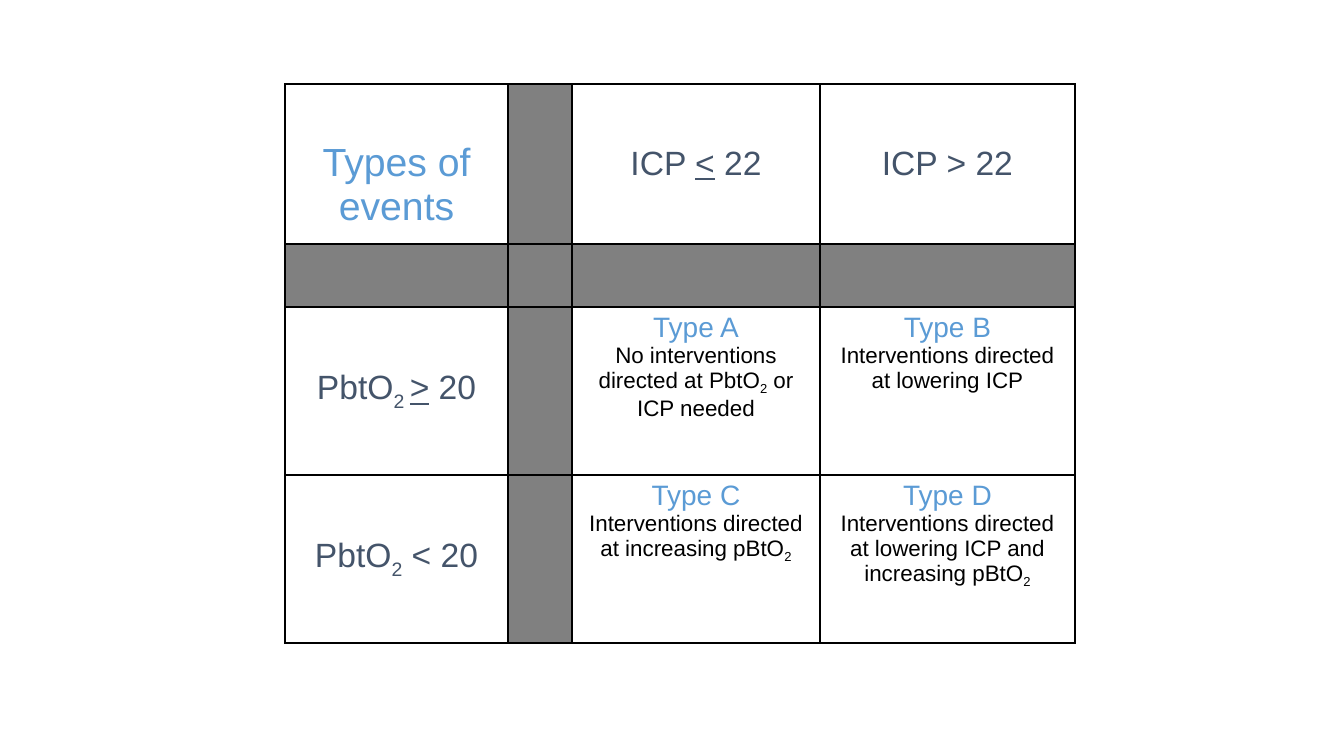
from dataclasses import dataclass

from pptx import Presentation
from pptx import util as u
from pptx.dml.color import RGBColor
from pptx.enum import text
from pptx.oxml import parse_xml
from pptx.oxml.ns import nsdecls

PX = 12192000 / 1344


@dataclass(frozen=True)
class Theme:
    font: str = "Arial"
    accent: str = "5B9BD5"
    heading: str = "44546A"
    ink: str = "000000"
    paper: str = "FFFFFF"
    divider: str = "808080"
    corner_size: int = 28
    heading_size: int = 24
    type_size: int = 20
    body_size: int = 16


THEME = Theme()
COLUMNS = [223, 64, 248, 255]
ROWS = [160, 63, 168, 168]
DIVIDER_ROW = DIVIDER_COLUMN = 1
PLAIN, SUB, UNDER = "plain", "sub", "under"

HEADINGS = {
    (0, 2): [("ICP ", PLAIN), ("<", UNDER), (" 22", PLAIN)],
    (0, 3): [("ICP > 22", PLAIN)],
    (2, 0): [("PbtO", PLAIN), ("2 ", SUB), (">", UNDER), (" 20", PLAIN)],
    (3, 0): [("PbtO", PLAIN), ("2", SUB), (" < 20", PLAIN)],
}
EVENT_TYPES = {
    (2, 2): ("Type A", [("No interventions directed at PbtO", PLAIN), ("2", SUB),
                        (" or ICP needed", PLAIN)]),
    (2, 3): ("Type B", [("Interventions directed at lowering ICP", PLAIN)]),
    (3, 2): ("Type C", [("Interventions directed at increasing pBtO", PLAIN),
                        ("2", SUB)]),
    (3, 3): ("Type D", [("Interventions directed at lowering ICP and increasing pBtO",
                         PLAIN), ("2", SUB)]),
}


def px(length):
    return u.Emu(round(length * PX))


def write(para, spans, *, size, color):
    """Fill a centred paragraph with (words, style) spans."""
    para.alignment = text.PP_ALIGN.CENTER
    for words, style in spans:
        span = para.add_run()
        span.text = words
        font = span.font
        font.name = THEME.font
        font.size = u.Pt(size)
        font.color.rgb = RGBColor.from_string(color)
        if style == UNDER:
            font.underline = True
        elif style == SUB:
            span._r.get_or_add_rPr().set("baseline", "-25000")


def style_cell(cell, fill):
    properties = cell._tc.get_or_add_tcPr()
    for side in "LRTB":
        properties.append(parse_xml(
            f'<a:ln{side} {nsdecls("a")} w="12700"><a:solidFill>'
            f'<a:srgbClr val="{THEME.ink}"/></a:solidFill></a:ln{side}>'))
    cell.fill.solid()
    cell.fill.fore_color.rgb = RGBColor.from_string(fill)


def add_grid(page, left, top):
    frame = page.shapes.add_table(len(ROWS), len(COLUMNS), px(left), px(top),
                                  px(sum(COLUMNS)), px(sum(ROWS)))
    table = frame.table
    table.first_row = table.horz_banding = False
    for column, width in zip(table.columns, COLUMNS):
        column.width = px(width)
    for row, height in zip(table.rows, ROWS):
        row.height = px(height)
    for r in range(len(ROWS)):
        for c in range(len(COLUMNS)):
            divides = r == DIVIDER_ROW or c == DIVIDER_COLUMN
            style_cell(table.cell(r, c), THEME.divider if divides else THEME.paper)
    return table


def fill_corner(cell):
    cell.margin_top = px(57)
    write(cell.text_frame.paragraphs[0], [("Types of events", PLAIN)],
          size=THEME.corner_size, color=THEME.accent)


def fill_heading(cell, spans):
    cell.vertical_anchor = text.MSO_ANCHOR.MIDDLE
    write(cell.text_frame.paragraphs[0], spans,
          size=THEME.heading_size, color=THEME.heading)


def fill_event_type(cell, name, advice):
    write(cell.text_frame.paragraphs[0], [(name, PLAIN)],
          size=THEME.type_size, color=THEME.accent)
    write(cell.text_frame.add_paragraph(), advice,
          size=THEME.body_size, color=THEME.ink)


def main():
    deck = Presentation()
    deck.slide_width, deck.slide_height = px(1344), px(756)
    page = deck.slides.add_slide(deck.slide_layouts[6])
    table = add_grid(page, 285, 84)
    fill_corner(table.cell(0, 0))
    for place, spans in HEADINGS.items():
        fill_heading(table.cell(*place), spans)
    for place, (name, advice) in EVENT_TYPES.items():
        fill_event_type(table.cell(*place), name, advice)
    deck.save("out.pptx")


if __name__ == "__main__":
    main()
